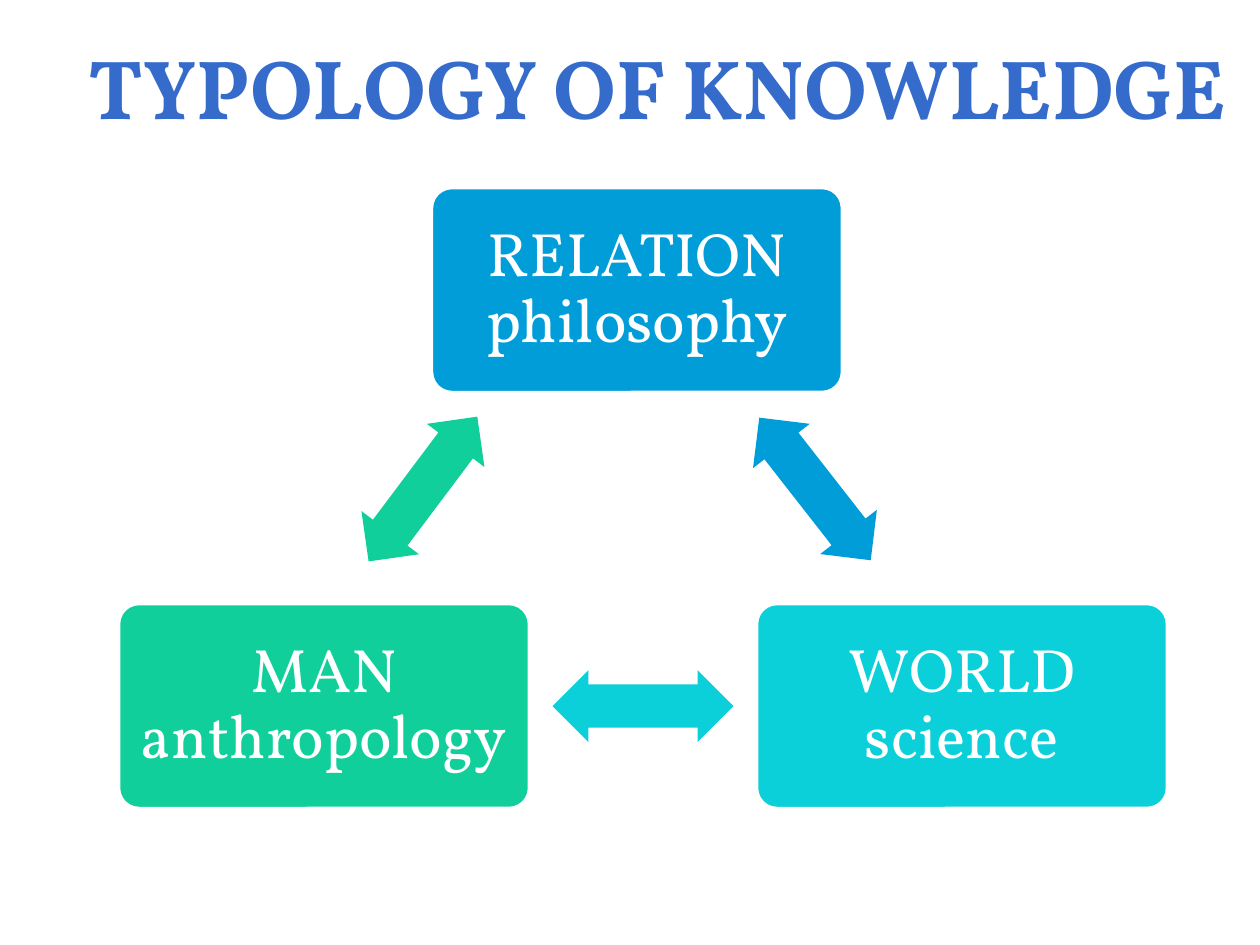
from pptx import Presentation
from pptx.dml.color import RGBColor
from pptx.enum.shapes import MSO_SHAPE
from pptx.enum.text import MSO_ANCHOR, MSO_AUTO_SIZE, PP_ALIGN
from pptx.util import Pt

EMU_PER_PX = 914400 / 126
WHITE = RGBColor(0xFF, 0xFF, 0xFF)
TITLE_BLUE = RGBColor(0x35, 0x6B, 0xCA)
BLUE = RGBColor(0x00, 0x9D, 0xD9)
CYAN = RGBColor(0x0B, 0xD0, 0xD9)
GREEN = RGBColor(0x10, 0xCF, 0x9B)

ROUNDED = MSO_SHAPE.ROUNDED_RECTANGLE
DOUBLE_ARROW = MSO_SHAPE.LEFT_RIGHT_ARROW
MIDDLE, TOP = MSO_ANCHOR.MIDDLE, MSO_ANCHOR.TOP
CENTER = PP_ALIGN.CENTER
NO_FIT = MSO_AUTO_SIZE.NONE

CARD_W, CARD_H = 411, 205
ARROW_W, ARROW_H = 181, 72


def px(value):
    return round(value * EMU_PER_PX)


class KnowledgeSlide:
    font = "Vollkorn"
    card_size = 35
    title_size = 48
    card_inset = 13

    def __init__(self, slide):
        self.slide = slide

    def add_text(self, paragraph, text, size, color, bold=False):
        paragraph.alignment = CENTER
        run = paragraph.add_run()
        run.text = text
        run.font.name = self.font
        run.font.size = Pt(size)
        run.font.bold = bold
        run.font.color.rgb = color

    def title(self, text, left, top, width, height):
        heading = self.slide.shapes.title
        heading.left, heading.top = px(left), px(top)
        heading.width, heading.height = px(width), px(height)
        frame = heading.text_frame
        frame.auto_size = NO_FIT
        frame.word_wrap = False
        frame.vertical_anchor = TOP
        self.add_text(frame.paragraphs[0], text, self.title_size, TITLE_BLUE, True)

    def block(self, kind, center_x, center_y, width, height, color):
        block = self.slide.shapes.add_shape(
            kind, px(center_x - width / 2), px(center_y - height / 2),
            px(width), px(height))
        block.shadow.inherit = False
        block.fill.solid()
        block.fill.fore_color.rgb = color
        return block

    def card(self, text, center_x, center_y, color):
        card = self.block(ROUNDED, center_x, center_y, CARD_W, CARD_H, color)
        card.adjustments[0] = 0.1
        card.line.color.rgb = WHITE
        card.line.width = Pt(2)
        frame = card.text_frame
        frame.word_wrap = True
        frame.vertical_anchor = MIDDLE
        frame.margin_left = frame.margin_right = px(self.card_inset)
        frame.margin_top = frame.margin_bottom = px(self.card_inset)
        paragraph = frame.paragraphs[0]
        paragraph.line_spacing = 0.9
        self.add_text(paragraph, text, self.card_size, WHITE)

    def arrow(self, center_x, center_y, angle, color):
        arrow = self.block(DOUBLE_ARROW, center_x, center_y,
                           ARROW_W, ARROW_H, color)
        arrow.adjustments[0] = 0.6
        arrow.adjustments[1] = 0.5
        arrow.rotation = angle
        arrow.line.fill.background()


def main():
    deck = Presentation()
    deck.slide_width, deck.slide_height = px(1260), px(945)
    title_only = deck.slide_layouts[5]
    page = KnowledgeSlide(deck.slides.add_slide(title_only))

    page.title("TYPOLOGY OF KNOWLEDGE", 55, 29, 1205, 115)

    # Triangle of cards, each with the arrow that leads on clockwise
    triangle = [
        ("RELATION philosophy", (637, 290), (815, 489), 52, BLUE),
        ("WORLD science", (962, 706), (643, 706), 180, CYAN),
        ("MAN anthropology", (324, 706), (423, 489), 306.9, GREEN),
    ]
    for text, card_center, arrow_center, angle, color in triangle:
        page.card(text, *card_center, color)
        page.arrow(*arrow_center, angle, color)

    deck.save("out.pptx")


if __name__ == "__main__":
    main()
